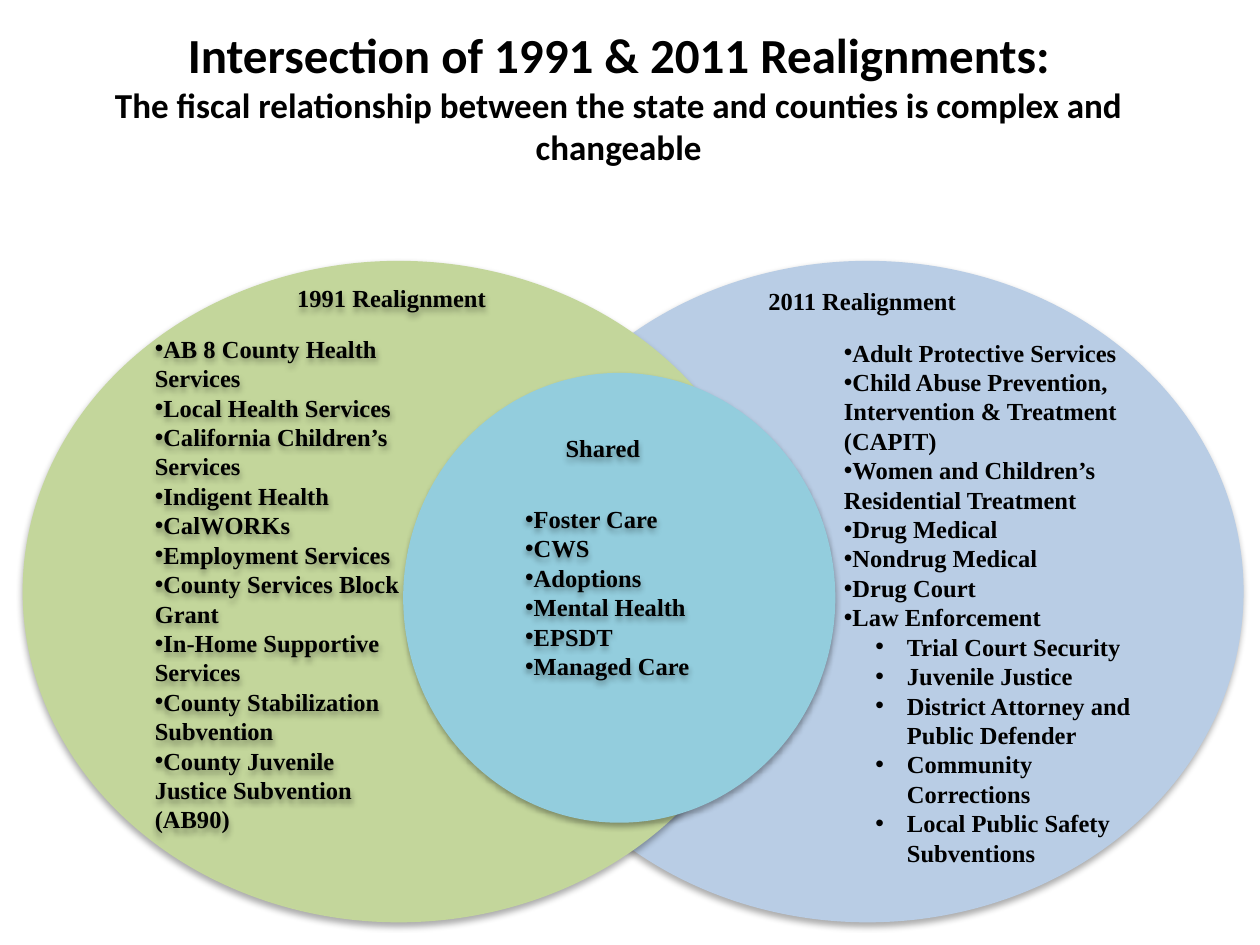
from lxml.etree import SubElement
from pptx import Presentation
from pptx.dml.color import RGBColor
from pptx.enum.shapes import MSO_SHAPE
from pptx.enum.text import MSO_ANCHOR, PP_ALIGN
from pptx.oxml.ns import qn
from pptx.util import Inches, Pt

COLORS = {"black": "000000", "2011": "B9CDE5", "1991": "C3D69B", "shared": "93CDDD"}
SERIF = "Times New Roman"

ITEMS_2011 = [
    "Adult Protective Services",
    "Child Abuse Prevention, Intervention & Treatment (CAPIT)",
    "Women and Children’s Residential Treatment",
    "Drug Medical", "Nondrug Medical", "Drug Court", "Law Enforcement",
]
LAW_ENFORCEMENT = [
    "Trial Court Security", "Juvenile Justice",
    "District Attorney and Public Defender",
    "Community\vCorrections", "Local Public Safety\vSubventions",
]
ITEMS_1991 = [
    "AB 8 County Health Services", "Local Health Services",
    "California Children’s Services", "Indigent Health", "CalWORKs",
    "Employment Services", "County Services Block Grant",
    "In-Home Supportive Services", "County Stabilization Subvention",
    "County Juvenile Justice Subvention (AB90)",
]
ITEMS_SHARED = ["Foster Care", "CWS", "Adoptions", "Mental Health", "EPSDT", "Managed Care"]


def add_shadow(s):
    effects = SubElement(s._element.spPr, qn("a:effectLst"))
    shadow = SubElement(effects, qn("a:outerShdw"), blurRad=str(Pt(3.5)),
                        dist=str(Pt(2.2)), dir="5400000", rotWithShape="0")
    color = SubElement(shadow, qn("a:srgbClr"), val=COLORS["black"])
    SubElement(color, qn("a:alpha"), val="32000")


def add_circle(slide, box, color):
    s = slide.shapes.add_shape(MSO_SHAPE.OVAL, *map(Inches, box))
    s.fill.solid()
    s.fill.fore_color.rgb = RGBColor.from_string(COLORS[color])
    s.line.fill.background()
    add_shadow(s)


def add_box(slide, box, shadow=False, anchor=MSO_ANCHOR.TOP):
    s = slide.shapes.add_textbox(*map(Inches, box))
    s.text_frame.word_wrap = True
    s.text_frame.vertical_anchor = anchor
    if shadow:
        add_shadow(s)
    return s.text_frame


def write(tf, text, size=14, font=SERIF, align=PP_ALIGN.LEFT, bullet=False, margin=0, hang=0):
    p = tf.paragraphs[0]
    if p.runs:
        p = tf.add_paragraph()
    p.alignment = align
    for i, line in enumerate(text.split("\v")):
        if i:
            p.add_line_break()
        r = p.add_run()
        r.text = line
        r.font.size = Pt(size)
        r.font.name = font
        r.font.bold = True
        r.font.color.rgb = RGBColor.from_string(COLORS["black"])
    if bullet:
        pPr = p._p.get_or_add_pPr()
        pPr.set("marL", str(Inches(margin)))
        pPr.set("indent", str(-Inches(hang)))
        SubElement(pPr, qn("a:buFont"), typeface="Arial")
        SubElement(pPr, qn("a:buChar"), char="•")


def add_list(slide, box, items, sub_items=(), shadow=False):
    tf = add_box(slide, box, shadow)
    for item in items:
        write(tf, item, bullet=True)
    for item in sub_items:
        write(tf, item, bullet=True, margin=0.5, hang=0.25)


def add_heading(slide, box, text, shadow=False):
    write(add_box(slide, box, shadow), text)


def add_title(slide):
    tf = add_box(slide, (0.45, 0.18, 8.92, 1.17), anchor=MSO_ANCHOR.MIDDLE)
    write(tf, "Intersection of 1991 & 2011 Realignments:", size=28, font="Calibri",
          align=PP_ALIGN.CENTER)
    write(tf, "The fiscal relationship between the state and counties is complex and changeable",
          size=20, font="Calibri", align=PP_ALIGN.CENTER)


def main():
    prs = Presentation()
    prs.slide_width, prs.slide_height = Inches(10), Inches(7.5)
    slide = prs.slides.add_slide(prs.slide_layouts[6])

    add_circle(slide, (3.9, 2.07, 5.97, 5.25), "2011")
    add_list(slide, (6.6, 2.63, 2.7, 4.58), ITEMS_2011, LAW_ENFORCEMENT)
    add_heading(slide, (6, 2.22, 1.8, 0.34), "2011 Realignment")

    add_circle(slide, (0.18, 2.07, 5.97, 5.25), "1991")
    add_list(slide, (1.13, 2.6, 2.18, 4.34), ITEMS_1991, shadow=True)
    add_heading(slide, (2.26, 2.2, 1.8, 0.34), "1991 Realignment", shadow=True)

    add_title(slide)

    add_circle(slide, (3.2, 2.96, 3.43, 3.57), "shared")
    add_list(slide, (4.07, 3.95, 1.83, 1.51), ITEMS_SHARED, shadow=True)
    add_heading(slide, (4.39, 3.39, 0.87, 0.34), "Shared", shadow=True)

    prs.save("out.pptx")


if __name__ == "__main__":
    main()
